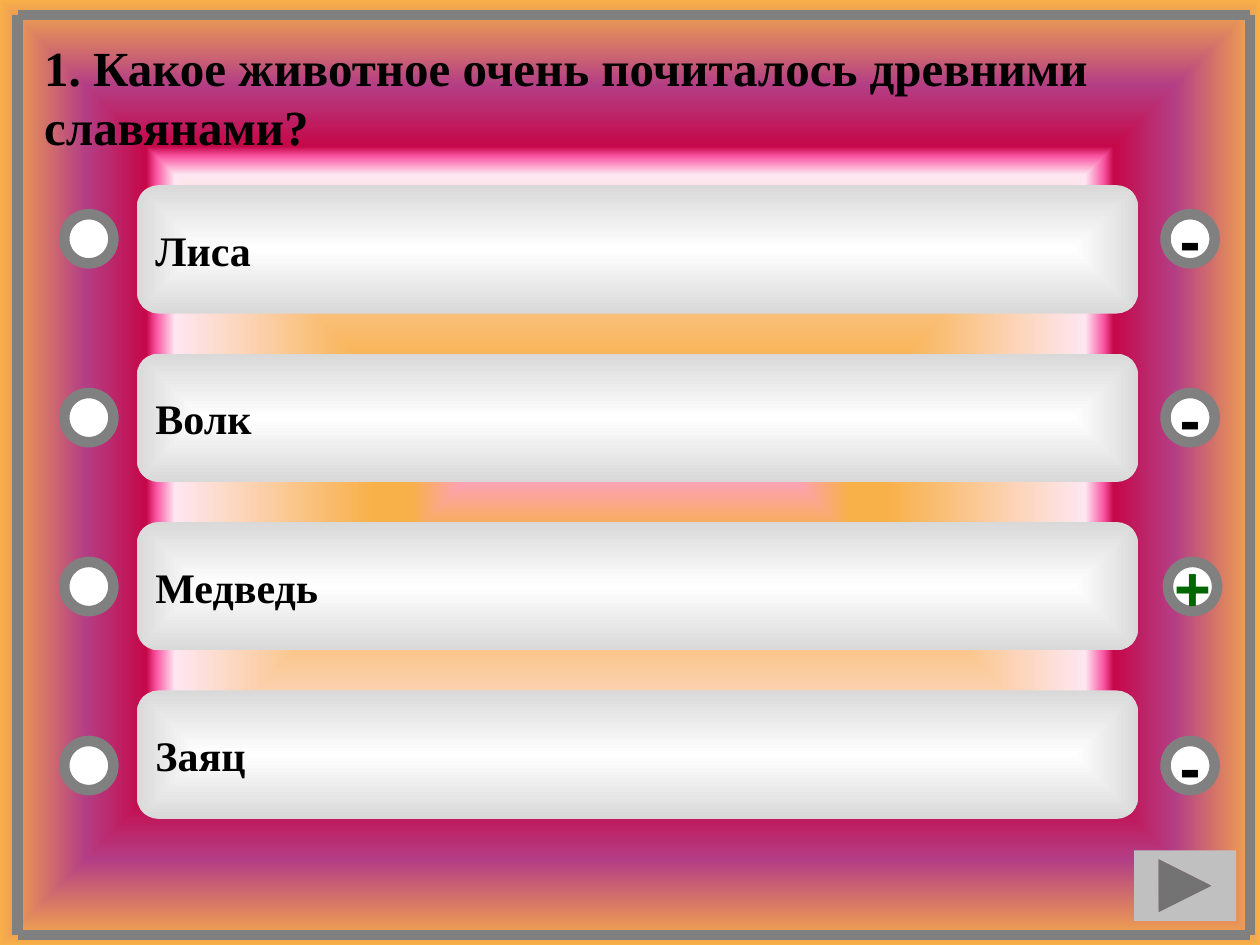
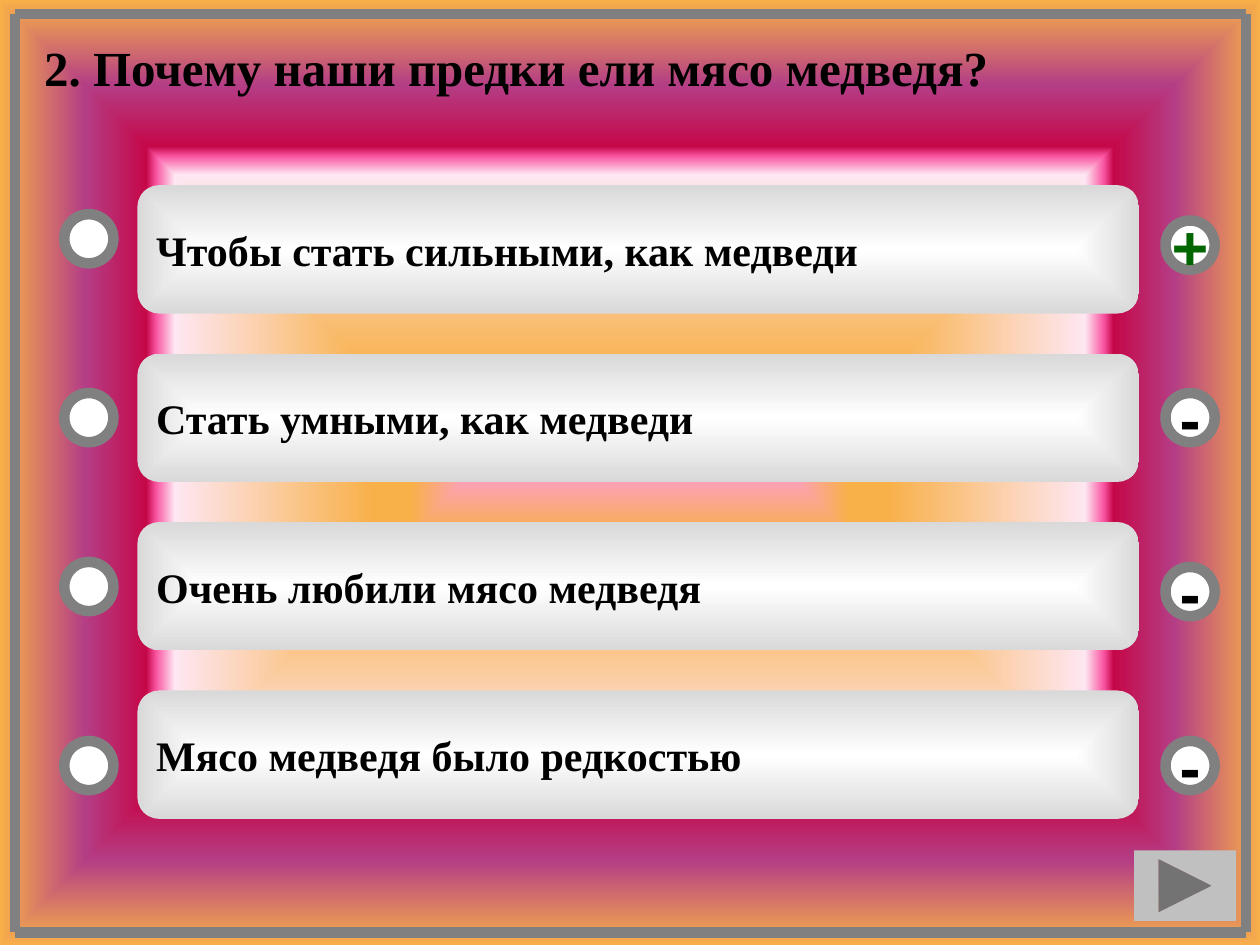
import dataclasses

import pptx
import pptx.dml.color
import pptx.enum.shapes
import pptx.enum.text
import pptx.oxml
import pptx.oxml.ns
import pptx.util

Pt = pptx.util.Pt
Kind = pptx.enum.shapes.MSO_SHAPE
Align = pptx.enum.text.PP_ALIGN
Anchor = pptx.enum.text.MSO_ANCHOR
Fit = pptx.enum.text.MSO_AUTO_SIZE
qn = pptx.oxml.ns.qn


@dataclasses.dataclass(frozen=True)
class Theme:
    """Colours, fonts and sizes of the quiz."""

    ink: str = "000000"
    right: str = "006600"
    edge: str = "808080"
    white: str = "FFFFFF"
    button: str = "C0C0C0"
    serif: str = "Times New Roman"
    sans: str = "Arial"
    head: int = 28
    body: int = 24
    sign: int = 36
    border: int = 6
    back: tuple = ((0, "FC9FCB"), (13, "F8B049"), (21, "F8B049"), (63, "FEE7F2"),
                   (67, "F952A0"), (69, "C50849"), (82, "B43E85"), (100, "F8B049"))
    card: tuple = ((0, "FFFFFF"), (100, "D9D9D9"))


THEME = Theme()
CARD_TOP, CARD_STEP = 105.8, 96.25
RING_TOPS = (122.4, 224.6, 321.1, 423.4)
RING_SIZE = 28.1
LEFT_X, RIGHT_X = 36.7, 666

QUIZ = (
    {
        "title": "1. Какое животное очень почиталось древними славянами?",
        "height": 74.9,
        "frame": (10.1, 8.6, 714.2, 534.2),
        "card_x": 78.1,
        "answers": ("Лиса", "Волк", "Медведь", "Заяц"),
        "correct": 2,
        "shifts": {2: (1.4, 0)},
    },
    {
        "title": "2. Почему наши предки ели мясо медведя?",
        "height": 41,
        "frame": (8.6, 7.9, 712.1, 532.8),
        "card_x": 78.5,
        "answers": ("Чтобы стать сильными, как медведи", "Стать умными, как медведи",
                    "Очень любили мясо медведя", "Мясо медведя было редкостью"),
        "correct": 0,
        "shifts": {0: (0, 3.6), 2: (0, 2.9)},
    },
)


def color(code):
    """Return an RGB colour."""
    return pptx.dml.color.RGBColor.from_string(code)


def blend(parent, stops):
    """Swap the solid fill of an element for a centred gradient."""
    marks = "".join(f'<a:gs pos="{at * 1000}"><a:srgbClr val="{code}"/></a:gs>'
                    for at, code in stops)
    grad = pptx.oxml.parse_xml(
        f'<a:gradFill {pptx.oxml.ns.nsdecls("a")} rotWithShape="1">'
        f'<a:gsLst>{marks}</a:gsLst><a:path path="shape">'
        '<a:fillToRect l="50000" t="50000" r="50000" b="50000"/></a:path></a:gradFill>')
    parent.replace(parent.find(qn("a:solidFill")), grad)


def write(frame, text, font, size, code=THEME.ink, align=Align.LEFT):
    """Put one bold paragraph in a text frame."""
    frame.text = text
    para = frame.paragraphs[0]
    para.alignment = align
    style = para.runs[0].font
    style.name, style.size, style.bold = font, Pt(size), True
    style.color.rgb = color(code)


def add_shape(slide, kind, box, fill):
    """Add a flat preset shape without an outline."""
    shape = slide.shapes.add_shape(kind, *map(Pt, box))
    shape.shadow.inherit = False
    shape.fill.solid()
    shape.fill.fore_color.rgb = color(fill)
    shape.line.fill.background()
    return shape


def add_frame(slide, left, top, right, bottom):
    """Draw the grouped border lines."""
    group = slide.shapes.add_group_shape()
    for ends in ((left, top, right, top), (left, top, left, bottom),
                 (left, bottom, right, bottom), (right, top, right, bottom)):
        line = group.shapes.add_connector(
            pptx.enum.shapes.MSO_CONNECTOR.STRAIGHT, *map(Pt, ends))
        line.line.color.rgb = color(THEME.edge)
        line.line.width = Pt(THEME.border)
        props = line.element.find(qn("p:spPr"))
        props.append(pptx.oxml.parse_xml(
            f'<a:effectLst {pptx.oxml.ns.nsdecls("a")}/>'))


def add_title(slide, text, height):
    """Place and format the question."""
    title = slide.shapes.title
    title.left, title.top, title.width, title.height = map(
        Pt, (18, 18, 667.4, height))
    frame = title.text_frame
    write(frame, text, THEME.serif, THEME.head)
    frame.word_wrap = True
    frame.auto_size = Fit.SHAPE_TO_FIT_TEXT
    frame.vertical_anchor = Anchor.TOP


def add_card(slide, left, top, text):
    """Add one answer card."""
    card = add_shape(slide, Kind.ROUNDED_RECTANGLE, (left, top, 572.4, 73.4),
                     THEME.white)
    card.adjustments[0] = 0.17
    blend(card.element.find(qn("p:spPr")), THEME.card)
    frame = card.text_frame
    write(frame, text, THEME.serif, THEME.body)
    frame.word_wrap = True
    frame.vertical_anchor = Anchor.MIDDLE


def add_ring(slide, left, top):
    """Add a white disc with a thick grey rim."""
    ring = add_shape(slide, Kind.OVAL, (left, top, RING_SIZE, RING_SIZE), THEME.white)
    ring.line.color.rgb = color(THEME.edge)
    ring.line.width = Pt(THEME.border)
    return ring


def add_mark(slide, left, top, correct):
    """Add a ring that shows whether the answer is right."""
    frame = add_ring(slide, left, top).text_frame
    sign, code = ("+", THEME.right) if correct else ("-", THEME.ink)
    write(frame, sign, THEME.sans, THEME.sign, code, Align.CENTER)
    frame.word_wrap = False
    frame.vertical_anchor = Anchor.MIDDLE


def add_quiz(deck, quiz):
    """Build one question slide."""
    slide = deck.slides.add_slide(deck.slide_layouts[5])
    add_frame(slide, *quiz["frame"])
    add_title(slide, quiz["title"], quiz["height"])
    for row, (answer, top) in enumerate(zip(quiz["answers"], RING_TOPS)):
        add_card(slide, quiz["card_x"], CARD_TOP + row * CARD_STEP, answer)
        add_ring(slide, LEFT_X, top)
        across, down = quiz["shifts"].get(row, (0, 0))
        add_mark(slide, RIGHT_X + across, top + down, row == quiz["correct"])
    add_shape(slide, Kind.ACTION_BUTTON_FORWARD_OR_NEXT, (648, 486, 58.3, 40.3),
              THEME.button)


def main():
    """Build and save the deck."""
    deck = pptx.Presentation()
    deck.slide_width, deck.slide_height = Pt(720), Pt(540)
    master = deck.slide_master
    master.background.fill.solid()
    master.background.fill.fore_color.rgb = color(THEME.white)
    blend(master.element.find(".//" + qn("p:bgPr")), THEME.back)
    for quiz in QUIZ:
        add_quiz(deck, quiz)
    deck.save("out.pptx")


if __name__ == "__main__":
    main()
